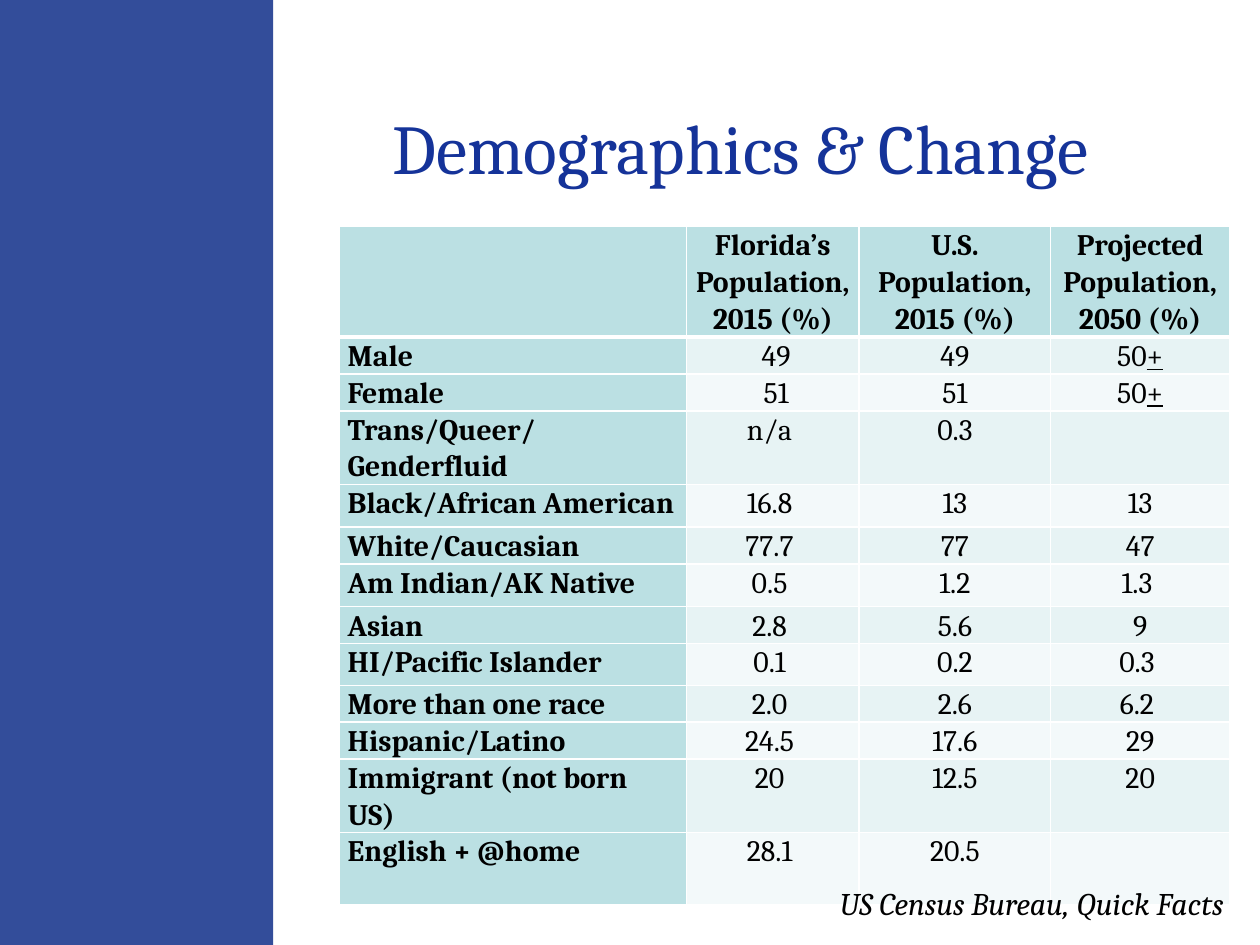
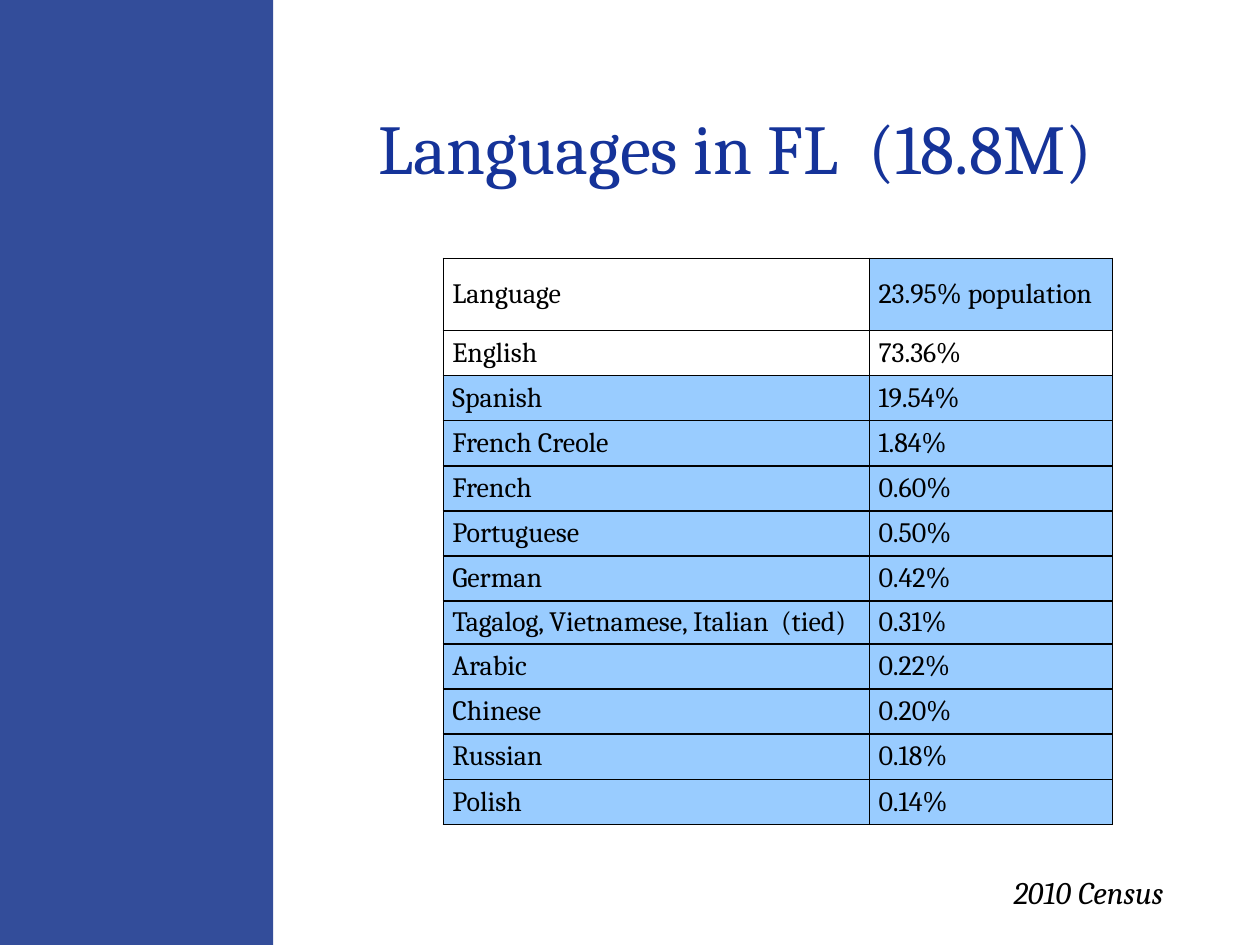
"""Builds two slides on population and language figures for Florida."""
from lxml import etree
from pptx import Presentation
from pptx.dml.color import RGBColor
from pptx.enum.shapes import MSO_SHAPE
from pptx.enum.text import MSO_ANCHOR, PP_ALIGN
from pptx.oxml.ns import qn
from pptx.util import Cm, Pt

LEFT, CENTER, RIGHT = PP_ALIGN.LEFT, PP_ALIGN.CENTER, PP_ALIGN.RIGHT
TOP, MIDDLE = MSO_ANCHOR.TOP, MSO_ANCHOR.MIDDLE
RECTANGLE = MSO_SHAPE.RECTANGLE

FONT = "Cambria"
BAND, TITLE, BLACK, WHITE = "334D9A", "153399", "000000", "FFFFFF"
TEAL, PALE, PALER, SKY = "BBE0E3", "E7F3F4", "F3F9FA", "99CCFF"
SLIDE_WIDTH, SLIDE_HEIGHT, BAND_WIDTH = 25.4, 19.05, 5.51

TITLE_FORMAT = {"size": Pt(40)}
SOURCE_FORMAT = {"size": Pt(18), "italic": True}

DEMOGRAPHICS = [
    ("", "Florida’s Population, 2015 (%)", "U.S. Population,\n2015 (%)", "Projected Population, 2050 (%)"),
    ("Male", " 49", "49", "50+"),
    ("Female", " 51", "51", "50+"),
    ("Trans/Queer/Genderfluid", "n/a ", "0.3", ""),
    ("Black/African American", "16.8 ", "13", "13"),
    ("White/Caucasian", "77.7 ", "77", "47"),
    ("Am Indian/AK Native", "0.5 ", "1.2", "1.3 "),
    ("Asian", "2.8 ", "5.6", "9"),
    ("HI/Pacific Islander", "0.1 ", "0.2", "0.3 "),
    ("More than one race", "2.0 ", "2.6", "6.2 "),
    ("Hispanic/Latino", "24.5 ", "17.6", "29"),
    ("Immigrant (not born US)", "20 ", "12.5", "20"),
    ("English + @home", "28.1 ", "20.5", ""),
]
LANGUAGES = [
    ("Language", "23.95% population"),
    ("English", "73.36%"),
    ("Spanish", "19.54%"),
    ("French Creole", "1.84%"),
    ("French", "0.60%"),
    ("Portuguese", "0.50%"),
    ("German", "0.42%"),
    ("Tagalog, Vietnamese, Italian  (tied)", "0.31%"),
    ("Arabic", "0.22%"),
    ("Chinese", "0.20%"),
    ("Russian", "0.18%"),
    ("Polish", "0.14%"),
]


def demographics_style(row, column):
    """Return the look of one demographics cell."""
    heading = row == 0 or column == 0
    return {
        "fill": TEAL if heading else (PALE if row % 2 else PALER),
        "bottom": 3 if row == 0 else 1,
        "align": CENTER if column else LEFT,
        "font": {"size": Pt(17), "bold": heading},
        "underline_plus": not heading,
    }


def languages_style(row, column):
    """Return the look of one languages cell."""
    plain = row == 1 or (row, column) == (0, 0)
    return {
        "fill": None if plain else SKY,
        "bottom": 1,
        "align": LEFT,
        "font": {"size": Pt(16)},
        "underline_plus": False,
    }


SLIDES = [
    {
        "title": ("Demographics & Change", (6.35, 1.7, 17.15, 2.51)),
        "source": ("US Census Bureau, Quick Facts", (15.04, 17.7, 9.88, 1.02)),
        "rows": DEMOGRAPHICS,
        "position": (6.83, 4.57),
        "widths": (7.01, 3.48, 3.86, 3.61),
        "heights": (2.13, 0.71, 0.71, 0.84, 0.86, 0.43, 0.86, 0.71, 0.84, 0.71, 0.71, 0.99, 1.45),
        "border": WHITE,
        "style": demographics_style,
        "cell": {"vertical_anchor": TOP, "margin_top": 0, "margin_bottom": 0},
        "line_spacing": 1.07,
    },
    {
        "title": ("Languages in FL  (18.8M)", (5.49, 1.7, 18.67, 2.51)),
        "source": ("2010 Census", (18.82, 17.48, 4.88, 1.02)),
        "rows": LANGUAGES,
        "position": (8.94, 5.21),
        "widths": (8.59, 4.9),
        "heights": (1.45, *[0.91] * 6, 0.86, *[0.91] * 4),
        "border": BLACK,
        "style": languages_style,
        "cell": {"vertical_anchor": MIDDLE, "margin_top": Cm(0.1), "margin_bottom": Cm(0.1)},
        "line_spacing": 1.0,
    },
]


def color(value):
    """Turn a hex string into a colour."""
    return RGBColor.from_string(value)


def apply(target, values):
    """Set each named attribute on the target."""
    for name, value in values.items():
        setattr(target, name, value)


def place(shape, box):
    """Move and size a shape to a box in centimetres."""
    apply(shape, dict(zip(("left", "top", "width", "height"), map(Cm, box))))


def add_run(paragraph, text, values, hex_color=BLACK):
    """Add a run with the shared font."""
    run = paragraph.add_run()
    run.text = text
    apply(run.font, {"name": FONT, **values})
    run.font.color.rgb = color(hex_color)


def write_line(shape, text, align, values, hex_color=BLACK):
    """Write one formatted line into a shape."""
    shape.text_frame.word_wrap = True
    paragraph = shape.text_frame.paragraphs[0]
    paragraph.alignment = align
    add_run(paragraph, text, values, hex_color)


def add_band(slide):
    """Draw the blue band down the left side."""
    band = slide.shapes.add_shape(RECTANGLE, 0, 0, Cm(BAND_WIDTH), Cm(SLIDE_HEIGHT))
    band.shadow.inherit = False
    band.fill.solid()
    band.fill.fore_color.rgb = color(BAND)
    band.line.fill.background()


def set_borders(cell, hex_color, top, bottom):
    """Draw the four borders of a cell with widths in points."""
    properties = cell._tc.get_or_add_tcPr()
    for side, width in (("L", 1), ("R", 1), ("T", top), ("B", bottom)):
        line = etree.SubElement(properties, qn(f"a:ln{side}"), w=str(Pt(width)))
        fill = etree.SubElement(line, qn("a:solidFill"))
        etree.SubElement(fill, qn("a:srgbClr"), val=hex_color)


def write_cell(cell, text, style, line_spacing):
    """Fill a cell with its paragraphs and underline a closing plus sign."""
    for index, line in enumerate(text.split("\n")):
        frame = cell.text_frame
        paragraph = frame.add_paragraph() if index else frame.paragraphs[0]
        apply(paragraph, {"alignment": style["align"], "line_spacing": line_spacing})
        if style["underline_plus"] and line.endswith("+"):
            add_run(paragraph, line[:-1], style["font"])
            add_run(paragraph, "+", {**style["font"], "underline": True})
        elif line:
            add_run(paragraph, line, style["font"])


def add_data_table(slide, content):
    """Build the table of a slide from its rows and style rule."""
    rows, widths, heights = content["rows"], content["widths"], content["heights"]
    left, top = content["position"]
    table = slide.shapes.add_table(
        len(rows), len(widths), Cm(left), Cm(top), Cm(sum(widths)), Cm(sum(heights))
    ).table
    apply(table, {"first_row": False, "horz_banding": False})
    for column, width in zip(table.columns, widths):
        column.width = Cm(width)
    for row, height in zip(table.rows, heights):
        row.height = Cm(height)
    for row_index, values in enumerate(rows):
        for column_index, text in enumerate(values):
            cell = table.cell(row_index, column_index)
            style = content["style"](row_index, column_index)
            above = content["style"](row_index - 1, column_index)["bottom"] if row_index else 1
            apply(cell, {"margin_left": Cm(0.18), "margin_right": Cm(0.18), **content["cell"]})
            set_borders(cell, content["border"], above, style["bottom"])
            if style["fill"]:
                cell.fill.solid()
                cell.fill.fore_color.rgb = color(style["fill"])
            else:
                cell.fill.background()
            write_cell(cell, text, style, content["line_spacing"])


def add_slide(presentation, content):
    """Add one slide with band, title, table and source line."""
    slide = presentation.slides.add_slide(presentation.slide_layouts[5])
    add_band(slide)
    title, title_box = content["title"]
    place(slide.shapes.title, title_box)
    slide.shapes.title.text_frame.vertical_anchor = MIDDLE
    write_line(slide.shapes.title, title, CENTER, TITLE_FORMAT, TITLE)
    add_data_table(slide, content)
    source, source_box = content["source"]
    write_line(slide.shapes.add_textbox(*map(Cm, source_box)), source, RIGHT, SOURCE_FORMAT)


def main():
    """Build and save the presentation."""
    presentation = Presentation()
    apply(presentation, {"slide_width": Cm(SLIDE_WIDTH), "slide_height": Cm(SLIDE_HEIGHT)})
    for content in SLIDES:
        add_slide(presentation, content)
    presentation.save("out.pptx")


if __name__ == "__main__":
    main()
